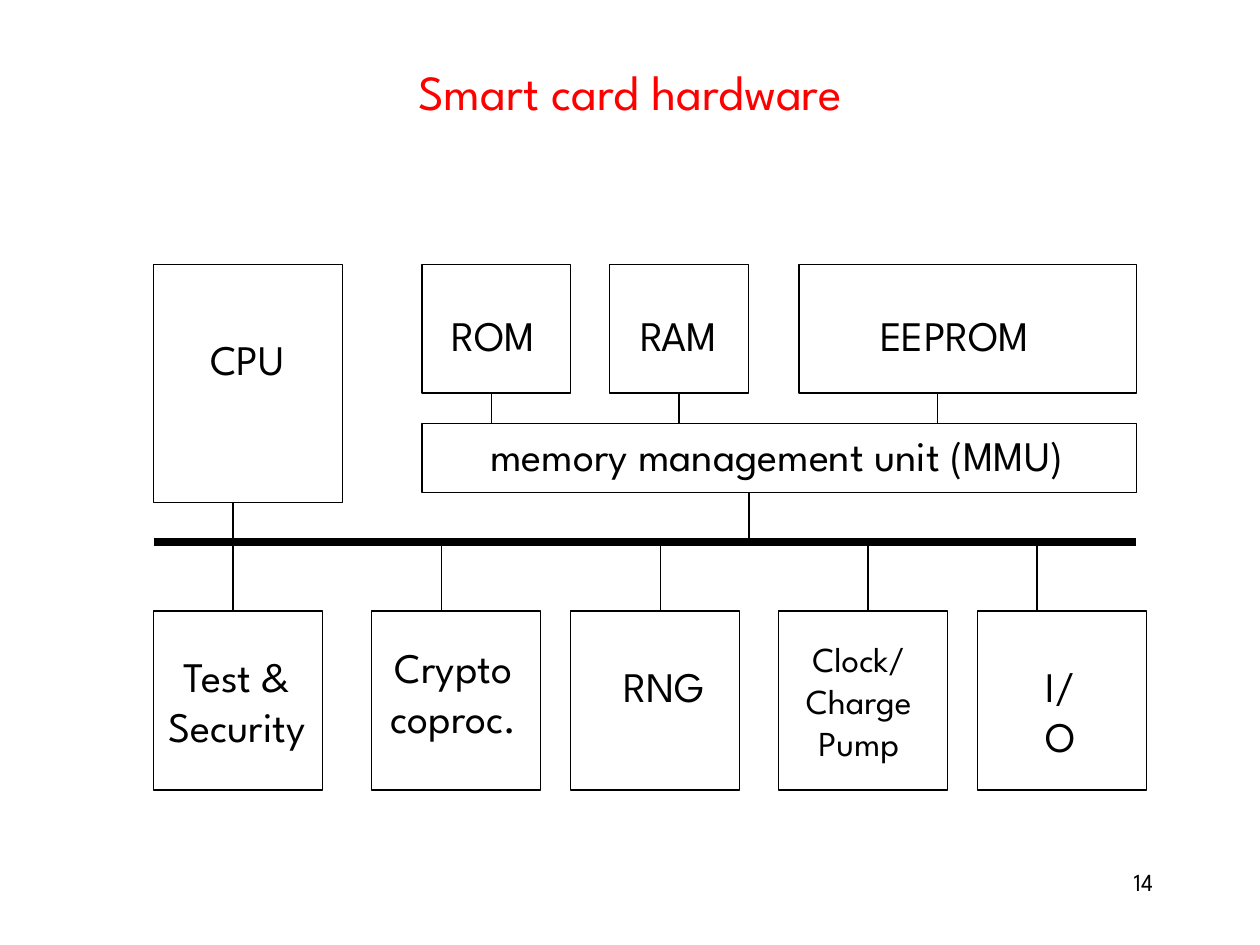
from lxml.etree import SubElement
from pptx import Presentation
from pptx.dml.color import RGBColor
from pptx.enum.shapes import MSO_CONNECTOR, MSO_SHAPE
from pptx.enum.text import MSO_ANCHOR, PP_ALIGN
from pptx.oxml.ns import qn
from pptx.util import Inches, Pt

COLORS = {"title": "FF0000", "ink": "000000"}
COLUMNS, ROWS = 100, 75


class Diagram:
    """Style and current slide; lengths are columns and rows of the grid."""

    font = "League Spartan"
    thin = 0.75

    def __init__(self, deck):
        self.slide = deck.slides.add_slide(deck.slide_layouts[5])
        self.column = deck.slide_width / COLUMNS
        self.row = deck.slide_height / ROWS

    def cells(self, *lengths):
        """Turn alternating columns and rows into slide lengths."""
        units = (self.column, self.row)
        return [round(length * units[i % 2]) for i, length in enumerate(lengths)]

    def fill_text(self, frame, text, size, color="ink", align=PP_ALIGN.CENTER):
        frame.text = text
        for paragraph in frame.paragraphs:
            paragraph.alignment = align
            for run in paragraph.runs:
                run.font.name = self.font
                run.font.size = Pt(size)
                run.font.color.rgb = RGBColor.from_string(COLORS[color])

    def title(self, text, *place):
        heading = self.slide.shapes.title
        heading.left, heading.top, heading.width, heading.height = self.cells(*place)
        heading.text_frame.vertical_anchor = MSO_ANCHOR.MIDDLE
        self.fill_text(heading.text_frame, text, 28, "title")

    def label(self, text, *place, size=24, wrap=False, align=PP_ALIGN.CENTER):
        frame = self.slide.shapes.add_textbox(*self.cells(*place)).text_frame
        frame.word_wrap = wrap
        self.fill_text(frame, text, size, align=align)

    def block(self, *place):
        rect = self.slide.shapes.add_shape(MSO_SHAPE.RECTANGLE, *self.cells(*place))
        rect.shadow.inherit = False
        rect.fill.background()
        rect.line.color.rgb = RGBColor.from_string(COLORS["ink"])
        rect.line.width = Pt(self.thin)
        return rect

    def wire(self, *ends, width=thin):
        line = self.slide.shapes.add_connector(
            MSO_CONNECTOR.STRAIGHT, *self.cells(*ends))
        line.line.color.rgb = RGBColor.from_string(COLORS["ink"])
        line.line.width = Pt(width)
        SubElement(line._element.spPr, qn("a:effectLst"))
        return line


def main():
    deck = Presentation()
    deck.slide_width, deck.slide_height = Inches(10), Inches(7.5)
    card = Diagram(deck)

    # Title and page number
    card.title("Smart card hardware", 7.5, 3, 85, 8.4)
    card.label("14", 71.7, 68.3, 20.8, 5, size=14, wrap=True, align=PP_ALIGN.RIGHT)

    # Shared edges of the diagram
    left, right = 12.2, 90.2
    top, memory_bottom = 21, 31.2
    mmu_left, mmu_top, mmu_height = 33.5, 33.6, 5.5
    bus, devices_top = 43, 48.5

    # Processor
    card.block(left, top, 15, 18.9)
    card.label("CPU", 15, 26, 9.3, 5.1)

    # Memories: name, left, width, label left, label width, wire column
    memories = [
        ("ROM", 33.5, 11.8, 34.2, 9.9, 39),
        ("RAM", 48.4, 11, 49.1, 9.6, 53.9),
        ("EEPROM", 63.4, 26.8, 67.3, 16.9, 74.4),
    ]
    for name, x, width, label_x, label_width, wire_x in memories:
        memory = card.block(x, top, width, memory_bottom - top)
        card.label(name, label_x, 24.1, label_width, 5.1)
        link = card.wire(wire_x, memory_bottom, wire_x, mmu_top)
        if wire_x == x + width / 2:
            link.begin_connect(memory, 2)

    # Memory management unit
    card.block(mmu_left, mmu_top, right - mmu_left, mmu_height)
    card.label("memory management unit (MMU)", 33.8, mmu_top, 55.7, 5.1)

    # Bus, with the processor and the MMU attached
    card.wire(left, bus, right, bus, width=4.5)
    card.wire(18.5, 39.9, 18.5, bus)
    card.wire(59.45, mmu_top + mmu_height, 59.45, bus)

    # Devices: name, left, label place, size, wire column
    devices = [
        ("Test &\nSecurity", left, (11, 51.1, 15.6, 9), 24, 18.5),
        ("Crypto\ncoproc.", 29.5, (28.8, 50.4, 14.4, 9.1), 24, 35.05),
        ("RNG", 45.3, (47.9, 51.9, 9.6, 5.1), 24, 52.4),
        ("Clock/\nCharge\nPump", 61.8, (62.2, 50.1, 11.9, 11.1), 20, 68.9),
        ("I/O", 77.6, (80.8, 51.9, 6.7, 5.1), 24, 82.3),
    ]
    for name, x, place, size, wire_x in devices:
        card.block(x, devices_top, 13.4, 14.2)
        card.label(name, *place, size=size, wrap=name == "I/O")
        card.wire(wire_x, bus, wire_x, devices_top)

    deck.save("out.pptx")


if __name__ == "__main__":
    main()
